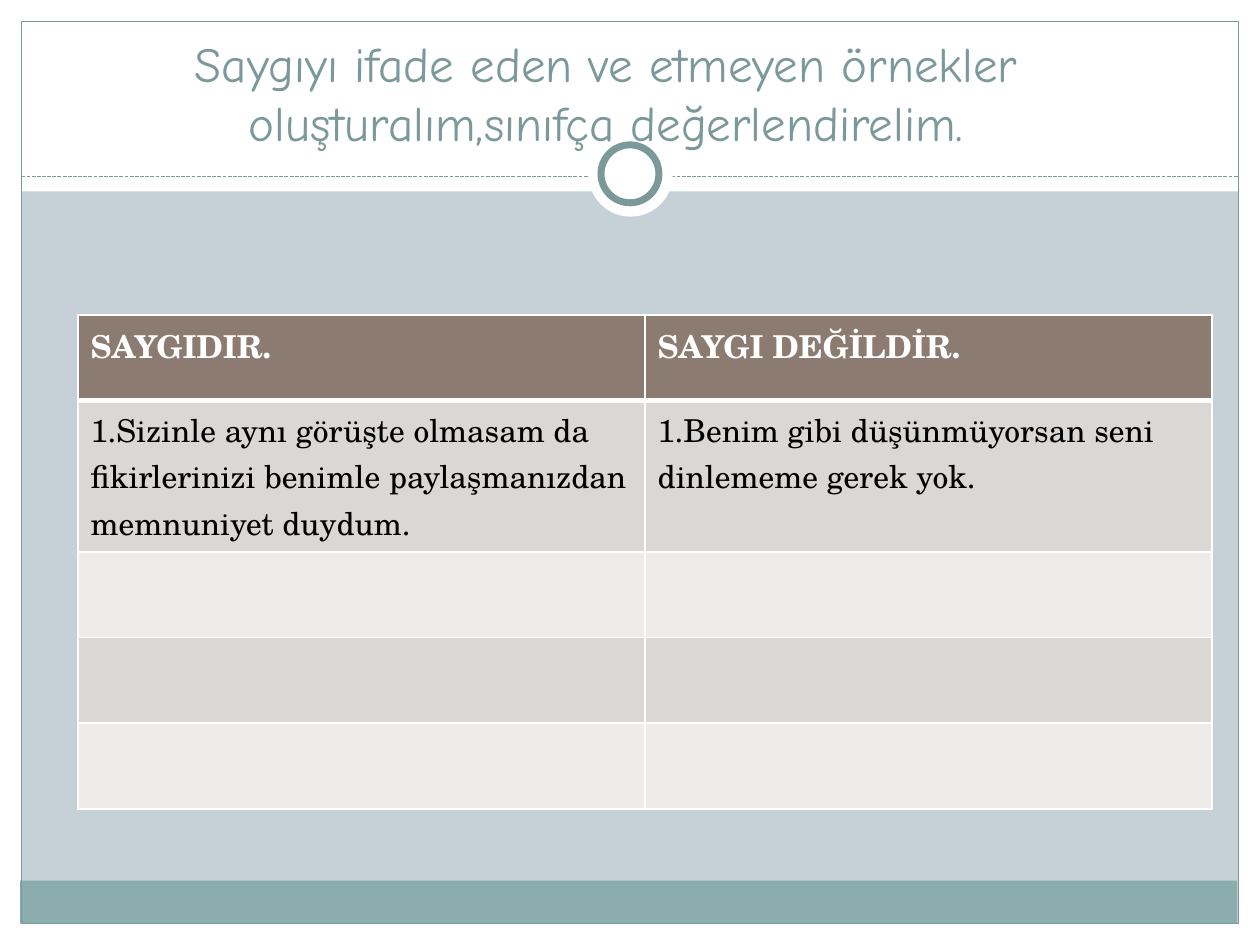
from lxml import etree
from pptx import Presentation
from pptx.dml.color import RGBColor
from pptx.enum.dml import MSO_LINE
from pptx.enum.shapes import MSO_CONNECTOR, MSO_SHAPE
from pptx.enum.text import MSO_ANCHOR, PP_ALIGN
from pptx.oxml.ns import qn
from pptx.util import Inches, Pt

RECT, OVAL = MSO_SHAPE.RECTANGLE, MSO_SHAPE.OVAL
STRAIGHT, DASH = MSO_CONNECTOR.STRAIGHT, MSO_LINE.SQUARE_DOT
BOTTOM, CENTER = MSO_ANCHOR.BOTTOM, PP_ALIGN.CENTER
WHITE, BLACK, TEAL, BAND, BACK = "FFFFFF", "000000", "7C999A", "8CADAE", "C5D1D7"
HEAD, DARK, LIGHT = "8C7B70", "DAD7D5", "EEECEB"
TITLE = "Saygıyı ifade eden ve etmeyen örnekler oluşturalım,sınıfça değerlendirelim."
ROWS = [
    ("SAYGIDIR.", "SAYGI DEĞİLDİR."),
    ("1.Sizinle aynı görüşte olmasam da fikirlerinizi benimle "
     "paylaşmanızdan memnuniyet duydum.",
     "1.Benim gibi düşünmüyorsan seni dinlememe gerek yok."),
    ("", ""),
    ("", ""),
    ("", ""),
]
HEIGHTS = [0.68, 1.2, 0.68, 0.68, 0.68]


def color(code):
    """Turn a hex string into a colour."""
    return RGBColor.from_string(code)


def paint(fill, code):
    """Make a fill solid."""
    fill.solid()
    fill.fore_color.rgb = color(code)


def add_form(slide, kind, box, fill=None, line=None, width=0.75):
    """Add a preset shape with optional fill and outline."""
    form = slide.shapes.add_shape(kind, *map(Inches, box))
    form.shadow.inherit = False
    if fill:
        paint(form.fill, fill)
    else:
        form.fill.background()
    if line:
        form.line.color.rgb = color(line)
        form.line.width = Pt(width)
    else:
        form.line.fill.background()


def add_rule(slide, left, right, top):
    """Add a dashed horizontal line."""
    rule = slide.shapes.add_connector(
        STRAIGHT, Inches(left), Inches(top), Inches(right), Inches(top))
    rule.line.color.rgb = color(TEAL)
    rule.line.width = Pt(0.75)
    rule.line.dash_style = DASH
    etree.SubElement(rule.element.spPr, qn("a:effectLst"))


def add_run(para, text, font, size, code, bold=False):
    """Add one styled run to a paragraph."""
    run = para.add_run()
    run.text = text
    run.font.name = font
    run.font.size = Pt(size)
    run.font.bold = bold
    run.font.color.rgb = color(code)


def add_title(slide):
    """Add the centred heading."""
    box = slide.shapes.add_textbox(Inches(0.31), 0, Inches(9), Inches(1.25))
    frame = box.text_frame
    frame.word_wrap = True
    frame.vertical_anchor = BOTTOM
    para = frame.paragraphs[0]
    para.alignment = CENTER
    add_run(para, TITLE, "Comic Neue", 28, TEAL)


def add_edges(cell, base):
    """Draw white cell borders, with the bottom one of a given width."""
    props = cell._tc.get_or_add_tcPr()
    widths = {"lnL": 1, "lnR": 1, "lnT": 1, "lnB": base}
    for spot, (tag, width) in enumerate(widths.items()):
        edge = etree.Element(qn("a:" + tag), w=str(Pt(width)))
        fill = etree.SubElement(edge, qn("a:solidFill"))
        etree.SubElement(fill, qn("a:srgbClr"), val=WHITE)
        props.insert(spot, edge)


def add_grid(slide):
    """Add the two-column table of examples."""
    grid = slide.shapes.add_table(
        len(ROWS), 2, Inches(0.62), Inches(2.5),
        Inches(9), Inches(sum(HEIGHTS))).table
    for row, (texts, height) in enumerate(zip(ROWS, HEIGHTS)):
        grid.rows[row].height = Inches(height)
        top = row == 0
        shade = HEAD if top else DARK if row % 2 else LIGHT
        for col, text in enumerate(texts):
            cell = grid.cell(row, col)
            paint(cell.fill, shade)
            add_edges(cell, 3 if top else 1)
            if text:
                add_run(cell.text_frame.paragraphs[0], text, "TeX Gyre Schola",
                        18, WHITE if top else BLACK, top)


def add_frame(slide):
    """Add the white margins, bottom band, outline and ring."""
    paint(slide.background.fill, BACK)
    for box in [(0, 7.33, 10, 0.17), (0, 0, 10, 1.52),
                (0, 0, 0.17, 7.5), (9.83, 0, 0.17, 7.5)]:
        add_form(slide, RECT, box, WHITE)
    add_form(slide, RECT, (0.16, 6.99, 9.66, 0.34), BAND)
    add_form(slide, RECT, (0.17, 0.17, 9.66, 7.16), line=TEAL)
    add_rule(slide, 0.17, 9.83, 1.4)
    add_form(slide, OVAL, (4.67, 1.05, 0.67, 0.67), WHITE)
    add_form(slide, OVAL, (4.77, 1.15, 0.46, 0.46), WHITE, TEAL, 4)


def main():
    """Build and save the slide."""
    deck = Presentation()
    deck.slide_width, deck.slide_height = Inches(10), Inches(7.5)
    slide = deck.slides.add_slide(deck.slide_layouts[6])
    add_frame(slide)
    add_title(slide)
    add_grid(slide)
    deck.save("out.pptx")


if __name__ == "__main__":
    main()
